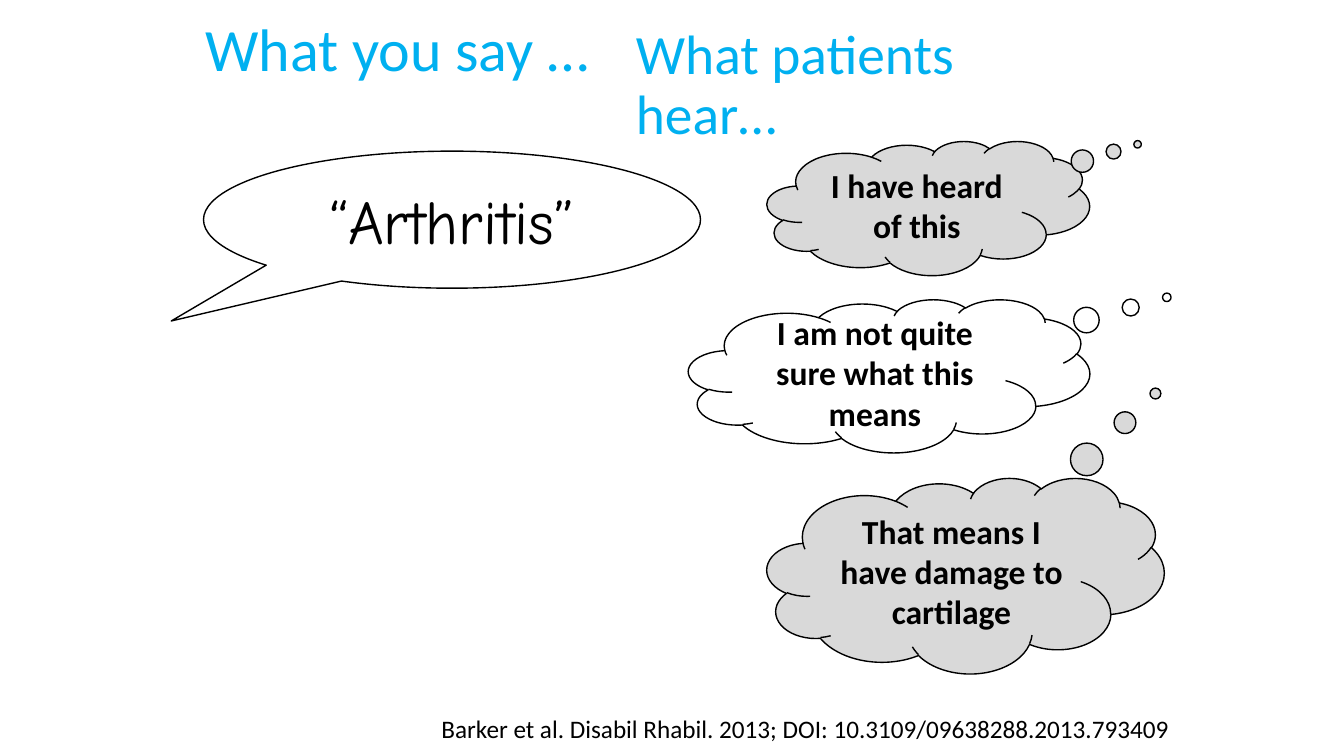
from dataclasses import dataclass

from pptx import Presentation
from pptx.dml.color import RGBColor
from pptx.enum.shapes import MSO_SHAPE
from pptx.enum.text import MSO_ANCHOR, PP_ALIGN
from pptx.shapes.autoshape import Shape
from pptx.slide import Slide
from pptx.util import Pt

COLOURS = {
    "heading": "00B0F0",
    "ink": "000000",
    "paper": "FFFFFF",
    "grey": "D9D9D9",
}


@dataclass(frozen=True)
class Wording:
    text: str
    size: float
    colour: str = "ink"
    font: str = "Calibri"
    bold: bool = False
    align: PP_ALIGN = PP_ALIGN.CENTER
    anchor: MSO_ANCHOR = MSO_ANCHOR.MIDDLE
    line_spacing: float = 1.0


@dataclass(frozen=True)
class Label:
    box: tuple[float, float, float, float]
    wording: Wording


@dataclass(frozen=True)
class Bubble:
    box: tuple[float, float, float, float]
    tail: tuple[float, float]
    fill: str
    wording: Wording
    outline: MSO_SHAPE = MSO_SHAPE.CLOUD_CALLOUT


def thought(text: str) -> Wording:
    return Wording(text, 24, bold=True)


SPEECH = Bubble(
    (145.4, 108, 355, 97.9), (-0.565, 0.739), "paper",
    Wording("“Arthritis”", 44, font="Comic Neue"), MSO_SHAPE.OVAL_CALLOUT,
)
HEADINGS = [
    Label((447.1, 33.8, 246.2, 56.2),
          Wording("What patients hear…", 39.6, "heading",
                  align=PP_ALIGN.LEFT, line_spacing=0.9)),
    Label((120.2, -5.8, 326.9, 79.2),
          Wording("What you say …", 42.9, "heading")),
]
THOUGHTS = [
    Bubble((547.9, 100.8, 230.4, 95.8), (0.649, -0.476), "grey",
           thought("I have heard of this")),
    Bubble((491.8, 213.8, 286.6, 109.4), (0.692, -0.513), "paper",
           thought("I am not quite sure what this means")),
    Bubble((547.9, 341.3, 283.7, 139.7), (0.478, -0.931), "grey",
           thought("That means I have damage to cartilage")),
]
CITATION = Label(
    (292.3, 506.2, 550.1, 28.8),
    Wording("Barker et al. Disabil Rhabil. 2013; DOI: 10.3109/09638288.2013.793409",
            18, align=PP_ALIGN.RIGHT, anchor=MSO_ANCHOR.TOP),
)


def colour(name: str) -> RGBColor:
    return RGBColor.from_string(COLOURS[name])


def write(holder: Shape, wording: Wording) -> None:
    frame = holder.text_frame
    frame.word_wrap = True
    frame.vertical_anchor = wording.anchor
    frame.text = wording.text
    paragraph = frame.paragraphs[0]
    paragraph.alignment = wording.align
    paragraph.line_spacing = wording.line_spacing
    font = paragraph.runs[0].font
    font.name = wording.font
    font.size = Pt(wording.size)
    font.bold = wording.bold
    font.color.rgb = colour(wording.colour)


def draw_label(slide: Slide, label: Label) -> None:
    write(slide.shapes.add_textbox(*map(Pt, label.box)), label.wording)


def draw_bubble(slide: Slide, bubble: Bubble) -> None:
    callout = slide.shapes.add_shape(bubble.outline, *map(Pt, bubble.box))
    callout.shadow.inherit = False
    for index, offset in enumerate(bubble.tail):
        callout.adjustments[index] = offset
    callout.fill.solid()
    callout.fill.fore_color.rgb = colour(bubble.fill)
    callout.line.color.rgb = colour("ink")
    callout.line.width = Pt(1)
    write(callout, bubble.wording)


def main() -> None:
    presentation = Presentation()
    presentation.slide_width = Pt(960)
    presentation.slide_height = Pt(540)
    slide = presentation.slides.add_slide(presentation.slide_layouts[6])
    draw_bubble(slide, SPEECH)
    for heading in HEADINGS:
        draw_label(slide, heading)
    for bubble in THOUGHTS:
        draw_bubble(slide, bubble)
    draw_label(slide, CITATION)
    presentation.save("out.pptx")


if __name__ == "__main__":
    main()
